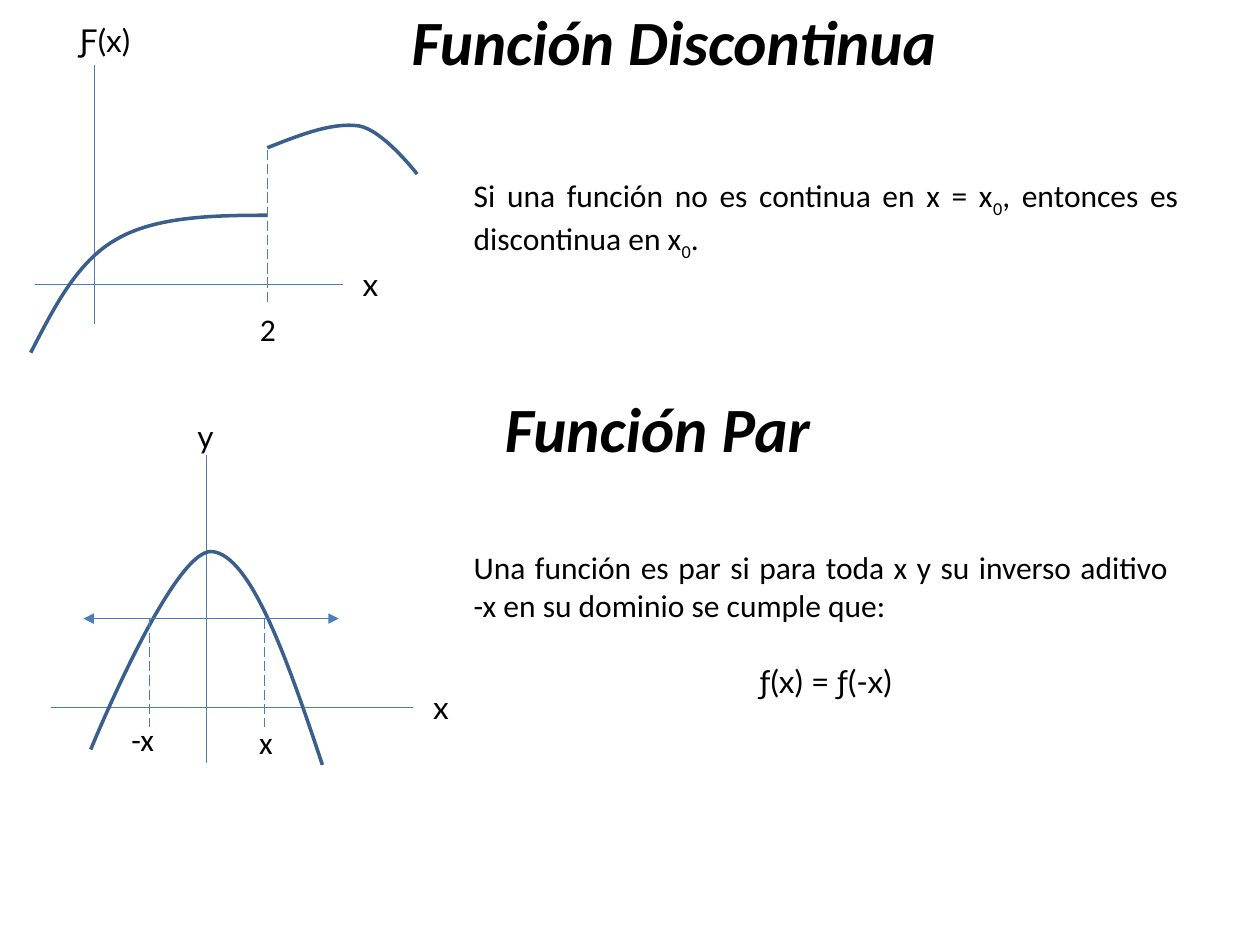
from lxml.etree import SubElement
from pptx import Presentation
from pptx.dml.color import RGBColor
from pptx.enum.dml import MSO_LINE
from pptx.enum.shapes import MSO_CONNECTOR
from pptx.enum.text import MSO_ANCHOR, MSO_AUTO_SIZE, PP_ALIGN
from pptx.oxml.ns import qn
from pptx.util import Cm, Pt

BLACK = RGBColor(0x00, 0x00, 0x00)
AXIS_BLUE = RGBColor(0x4B, 0x7E, 0xBC)
CURVE_BLUE = RGBColor(0x3A, 0x5F, 0x8C)

BODY = {"name": "Calibri", "size": Pt(18)}
SYMBOL = {"name": "Lato", "size": Pt(18)}
HEADING = {"name": "Calibri", "size": Pt(36), "bold": True, "italic": True}
LINE_HEIGHT = Pt(22)
LABEL_HEIGHT = 1.02
HEADING_SIZE = (21.79, 1.8)


def write(paragraph, pieces, style, align):
    """Fill a paragraph; every second piece is a subscript."""
    paragraph.alignment = align
    for index, piece in enumerate(pieces):
        run = paragraph.add_run()
        run.text = piece
        for key, value in style.items():
            setattr(run.font, key, value)
        run.font.color.rgb = BLACK
        if index % 2:
            run._r.get_or_add_rPr().set("baseline", "-25000")


def add_text(slide, left, top, width, height, pieces, style, align):
    box = slide.shapes.add_textbox(Cm(left), Cm(top), Cm(width), Cm(height))
    frame = box.text_frame
    frame.word_wrap = True
    write(frame.paragraphs[0], pieces, style, align)
    return frame


def add_label(slide, left, top, width, text, style, align=PP_ALIGN.CENTER):
    add_text(slide, left, top, width, LABEL_HEIGHT, [text], style, align)


def set_title(slide, left, top, text):
    title = slide.shapes.title
    width, height = HEADING_SIZE
    place = {"left": left, "top": top, "width": width, "height": height}
    for key, value in place.items():
        setattr(title, key, Cm(value))
    frame = title.text_frame
    frame.auto_size = MSO_AUTO_SIZE.NONE
    frame.vertical_anchor = MSO_ANCHOR.TOP
    write(frame.paragraphs[0], [text], HEADING, PP_ALIGN.CENTER)


def add_line(slide, x1, y1, x2, y2, dashed=False, arrows=False):
    connector = slide.shapes.add_connector(
        MSO_CONNECTOR.STRAIGHT, Cm(x1), Cm(y1), Cm(x2), Cm(y2))
    line = connector.line
    line.color.rgb = AXIS_BLUE
    line.width = Pt(0.75)
    if dashed:
        line.dash_style = MSO_LINE.LONG_DASH
    if arrows:
        for end in ("a:headEnd", "a:tailEnd"):
            SubElement(line._get_or_add_ln(), qn(end), type="triangle")
    SubElement(connector._element.spPr, qn("a:effectLst"))


def add_curve(slide, *knots):
    """Draw chained cubic Béziers: a start, then three points a segment."""
    start, *others = [(Cm(x), Cm(y)) for x, y in knots]
    builder = slide.shapes.build_freeform(*start)
    builder.add_line_segments(others, close=False)
    curve = builder.convert_to_shape()
    bend_segments(curve)
    curve.shadow.inherit = False
    curve.fill.background()
    curve.line.color.rgb = CURVE_BLUE
    curve.line.width = Pt(2)


def bend_segments(curve):
    """Turn each three straight segments into one cubic Bézier."""
    outline = next(curve._element.iter(qn("a:path")))
    for index, segment in enumerate(outline.findall(qn("a:lnTo"))):
        if index % 3 == 0:
            bezier = SubElement(outline, qn("a:cubicBezTo"))
        bezier.append(segment[0])
        outline.remove(segment)


def draw_discontinuous(slide):
    add_line(slide, 1.9, 1.32, 1.9, 6.53)
    add_line(slide, 0.71, 5.73, 6.91, 5.73)
    add_curve(slide, (0.62, 7.11), (1.09, 6.2), (1.55, 5.28), (2.34, 4.83),
              (3.12, 4.37), (4.27, 4.34), (5.39, 4.34))
    add_curve(slide, (5.39, 2.98), (6.05, 2.72), (6.7, 2.46), (7.24, 2.54),
              (7.72, 2.62), (8.41, 3.51), (8.41, 3.51))
    add_line(slide, 5.39, 3.02, 5.39, 6.12, dashed=True)
    add_label(slide, 4.7, 6.12, 1.4, "2", BODY)
    add_label(slide, 0.62, 0.3, 3, "Ƒ(x)", SYMBOL)
    add_label(slide, 7.06, 5.21, 1.04, "x", SYMBOL, PP_ALIGN.LEFT)


def draw_even(slide):
    add_line(slide, 4.16, 9.17, 4.16, 15.39)
    add_line(slide, 1.02, 14.26, 8.33, 14.26)
    add_curve(slide, (6.5, 15.42), (5.79, 13.28), (5.05, 11.18), (4.27, 11.12),
              (3.48, 11.07), (1.83, 15.11), (1.83, 15.11))
    add_line(slide, 1.68, 12.47, 6.83, 12.47, arrows=True)
    for x in (3.02, 5.33):
        add_line(slide, x, 12.47, x, 14.66, dashed=True)
    add_label(slide, 2.22, 14.39, 1.32, "-x", BODY)
    add_label(slide, 4.7, 14.45, 1.32, "x", BODY)
    add_label(slide, 8.48, 13.74, 1.04, "x", SYMBOL, PP_ALIGN.LEFT)
    add_label(slide, 3.73, 8.28, 1.04, "y", SYMBOL, PP_ALIGN.LEFT)


def main():
    deck = Presentation()
    deck.slide_width, deck.slide_height = Cm(25.4), Cm(19.05)
    slide = deck.slides.add_slide(deck.slide_layouts[5])

    set_title(slide, 2.69, -0.08, "Función Discontinua")
    draw_discontinuous(slide)
    add_text(slide, 9.3, 3.43, 14.7, 1.8,
             ["Si una función no es continua en x = x", "0",
              ", entonces es discontinua en x", "0", "."],
             BODY, PP_ALIGN.JUSTIFY)

    add_text(slide, 2.36, 7.72, *HEADING_SIZE, ["Función Par"],
             HEADING, PP_ALIGN.CENTER)
    draw_even(slide)
    definition = add_text(
        slide, 9.3, 10.93, 14.5, 3.34,
        ["Una función es par si para toda x y su inverso aditivo "
         "-x en su dominio se cumple que:"],
        BODY, PP_ALIGN.JUSTIFY)
    formula = definition.add_paragraph()
    formula.space_before = LINE_HEIGHT
    formula._p.get_or_add_pPr().set("marL", str(Cm(0.2)))
    write(formula, ["ƒ(x) = ƒ(-x)"], SYMBOL, PP_ALIGN.CENTER)

    deck.save("out.pptx")


if __name__ == "__main__":
    main()
